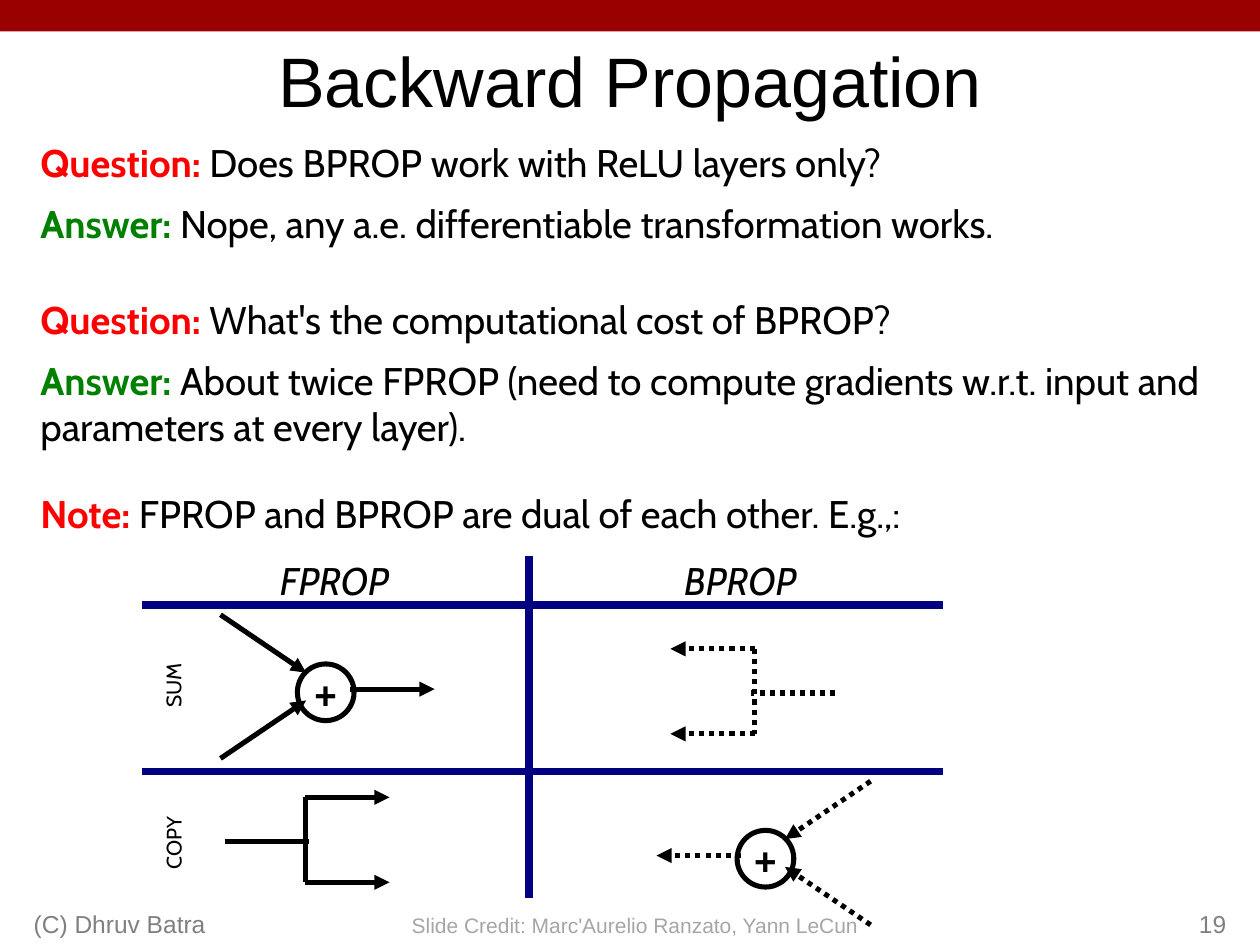
from typing import NamedTuple, Optional

from lxml import etree
from pptx import Presentation
from pptx import util as u
from pptx.dml.color import RGBColor
from pptx.enum import dml, shapes, text
from pptx.oxml import ns

BLACK = RGBColor(0, 0, 0)
RED = RGBColor(0xFF, 0, 0)
GREEN = RGBColor(0, 0x80, 0)
NAVY = RGBColor(0, 0, 0x80)
MAROON = RGBColor(0x99, 0, 0)
GRAY = RGBColor(0x80, 0x80, 0x80)
PALE_GRAY = RGBColor(0xA6, 0xA6, 0xA6)

Pt = u.Pt
LEFT, CENTER, RIGHT = text.PP_ALIGN.LEFT, text.PP_ALIGN.CENTER, text.PP_ALIGN.RIGHT
TOP, MIDDLE, BOTTOM = text.MSO_ANCHOR.TOP, text.MSO_ANCHOR.MIDDLE, text.MSO_ANCHOR.BOTTOM
PLAIN_INSETS = (7.2, 3.6, 7.2, 3.6)
TIGHT_INSETS = (6.5, 5, 6.5, 3)
NODE_INSETS = (8, 6, 8, 4)
STROKE = 2.89
NODE_SIZE = 32.4


class Span(NamedTuple):
    words: str
    size: float = 22
    font: str = "Cabin"
    color: RGBColor = BLACK
    bold: bool = False
    italic: bool = False


class Label(NamedTuple):
    left: float
    top: float
    width: float
    height: float
    paras: list[list[Span]]
    align: text.PP_ALIGN = LEFT
    anchor: text.MSO_ANCHOR = TOP
    insets: tuple[float, ...] = TIGHT_INSETS
    rotation: float = 0
    wrap: bool = True
    gap: float = 8.5


class Figure(NamedTuple):
    x: float
    y: float
    direction: int  # 1 flows right, -1 flows left
    dash: Optional[dml.MSO_LINE]


def fill_text(shape, label: Label) -> None:
    frame = shape.text_frame
    frame.word_wrap = label.wrap
    frame.vertical_anchor = label.anchor
    (frame.margin_left, frame.margin_top,
     frame.margin_right, frame.margin_bottom) = map(Pt, label.insets)
    for index, spans in enumerate(label.paras):
        para = frame.add_paragraph() if index else frame.paragraphs[0]
        para.alignment = label.align
        if index:
            para.space_before = Pt(label.gap)
        for span in spans:
            run = para.add_run()
            run.text = span.words
            run.font.name, run.font.size = span.font, Pt(span.size)
            run.font.bold, run.font.italic = span.bold, span.italic
            run.font.color.rgb = span.color


def add_label(page, label: Label) -> None:
    box = page.shapes.add_textbox(*map(Pt, label[:4]))
    box.rotation = label.rotation
    fill_text(box, label)


def add_line(page, x1: float, y1: float, x2: float, y2: float,
             color: RGBColor = BLACK, width: float = STROKE,
             dash: Optional[dml.MSO_LINE] = None, arrow: bool = False) -> None:
    line = page.shapes.add_connector(
        shapes.MSO_CONNECTOR.STRAIGHT, Pt(x1), Pt(y1), Pt(x2), Pt(y2))
    line.line.color.rgb = color
    line.line.width = Pt(width)
    if dash:
        line.line.dash_style = dash
    if arrow:
        etree.SubElement(line.line._ln, ns.qn("a:tailEnd"), type="triangle")
    etree.SubElement(line._element.spPr, ns.qn("a:effectLst"))


def add_strokes(page, figure: Figure, strokes: list[tuple]) -> None:
    """Draw (x1, y1, x2, y2, arrow) strokes around the figure's origin."""
    for x1, y1, x2, y2, arrow in strokes:
        add_line(page, figure.x + figure.direction * x1, figure.y + y1,
                 figure.x + figure.direction * x2, figure.y + y2,
                 dash=figure.dash, arrow=arrow)


def add_sum(page, figure: Figure) -> None:
    label = Label(figure.x - NODE_SIZE / 2, figure.y - NODE_SIZE / 2,
                  NODE_SIZE, NODE_SIZE, [[Span("+", font="Arial", bold=True)]],
                  CENTER, MIDDLE, NODE_INSETS, wrap=False)
    node = page.shapes.add_shape(shapes.MSO_SHAPE.OVAL, *map(Pt, label[:4]))
    node.shadow.inherit = False
    node.fill.background()
    node.line.color.rgb = BLACK
    node.line.width = Pt(STROKE)
    fill_text(node, label)
    add_strokes(page, figure, [(-60.1, -44.3, -11.2, -11.2, True),
                               (-60.1, 37.8, -11.2, 4.7, True),
                               (14, -1.8, 62.3, -1.8, True)])


def add_fork(page, figure: Figure) -> None:
    upper, lower = -25.2, 23.4
    add_strokes(page, figure, [(0, upper, 48.2, upper, True),
                               (0, lower, 48.2, lower, True),
                               (0, upper, 0, lower, False),
                               (-46.1, 0, 2.2, 0, False)])


def question(words: str, lead: str = "Question:") -> list[Span]:
    return [Span(lead, color=RED, bold=True), Span(words)]


def answer(words: str) -> list[Span]:
    return [Span("Answer: ", color=GREEN, bold=True), Span(words)]


def footer(words: str, size: float = 14, color: RGBColor = GRAY) -> list[list[Span]]:
    return [[Span(words, size, "Arial", color)]]


LABELS = [
    # Title
    Label(54, 18, 612, 54, [[Span("Backward Propagation", 40, "Arial")]],
          CENTER, insets=PLAIN_INSETS),
    # Questions and answers
    Label(16.6, 74.2, 685.4, 63.4, [
        question(" Does BPROP work with ReLU layers only?"),
        answer("Nope, any a.e. differentiable transformation works.")]),
    Label(16.6, 164.2, 685.4, 87.1, [
        question(" What's the computational cost of BPROP?"),
        answer("About twice FPROP (need to compute gradients w.r.t. "
               "input and parameters at every layer).")]),
    Label(16.6, 275, 685.4, 31, [
        question(" FPROP and BPROP are dual of each other. E.g.,:", "Note:")]),
    # Grid headings
    Label(141.8, 313.2, 98.6, 34.6, [[Span("FPROP", italic=True)]], CENTER),
    Label(373, 313.2, 100, 34.6, [[Span("BPROP", italic=True)]], CENTER),
    Label(66.2, 379.4, 65.5, 24.5, [[Span("SUM", 12)]], CENTER, rotation=270),
    Label(75.6, 460.1, 65.5, 43.2, [[Span("COPY", 12)]], CENTER, rotation=270),
    # Footer
    Label(12.2, 504, 228.2, 36, footer("(C) Dhruv Batra"),
          anchor=BOTTOM, insets=PLAIN_INSETS),
    Label(226.8, 517.7, 272.2, 21.6,
          footer("Slide Credit: Marc'Aurelio Ranzato, Yann LeCun", 12, PALE_GRAY),
          CENTER, insets=PLAIN_INSETS, wrap=False),
    Label(558, 504, 149.8, 36, footer("19"), RIGHT, BOTTOM, PLAIN_INSETS),
]


def main() -> None:
    deck = Presentation()
    deck.slide_width, deck.slide_height = Pt(720), Pt(540)
    page = deck.slides.add_slide(deck.slide_layouts[6])

    # Top band
    band = page.shapes.add_shape(shapes.MSO_SHAPE.RECTANGLE, 0, 0, Pt(720), Pt(18))
    band.shadow.inherit = False
    band.fill.solid()
    band.fill.fore_color.rgb = MAROON
    band.line.fill.background()

    # Dual operations: solid forward, dotted backward
    dotted = dml.MSO_LINE.ROUND_DOT
    add_sum(page, Figure(186.1, 395.6, 1, None))
    add_sum(page, Figure(437.4, 490.7, -1, dotted))
    add_fork(page, Figure(431.3, 396, -1, dotted))
    add_fork(page, Figure(174.4, 480.8, 1, None))

    # Grid rules
    for y in (345.6, 440.9):
        add_line(page, 81.4, y, 538.6, y, NAVY, 4.31)
    add_line(page, 302.4, 513.4, 302.4, 317.5, NAVY, 4.31)

    for label in LABELS:
        add_label(page, label)
    deck.save("out.pptx")


if __name__ == "__main__":
    main()
